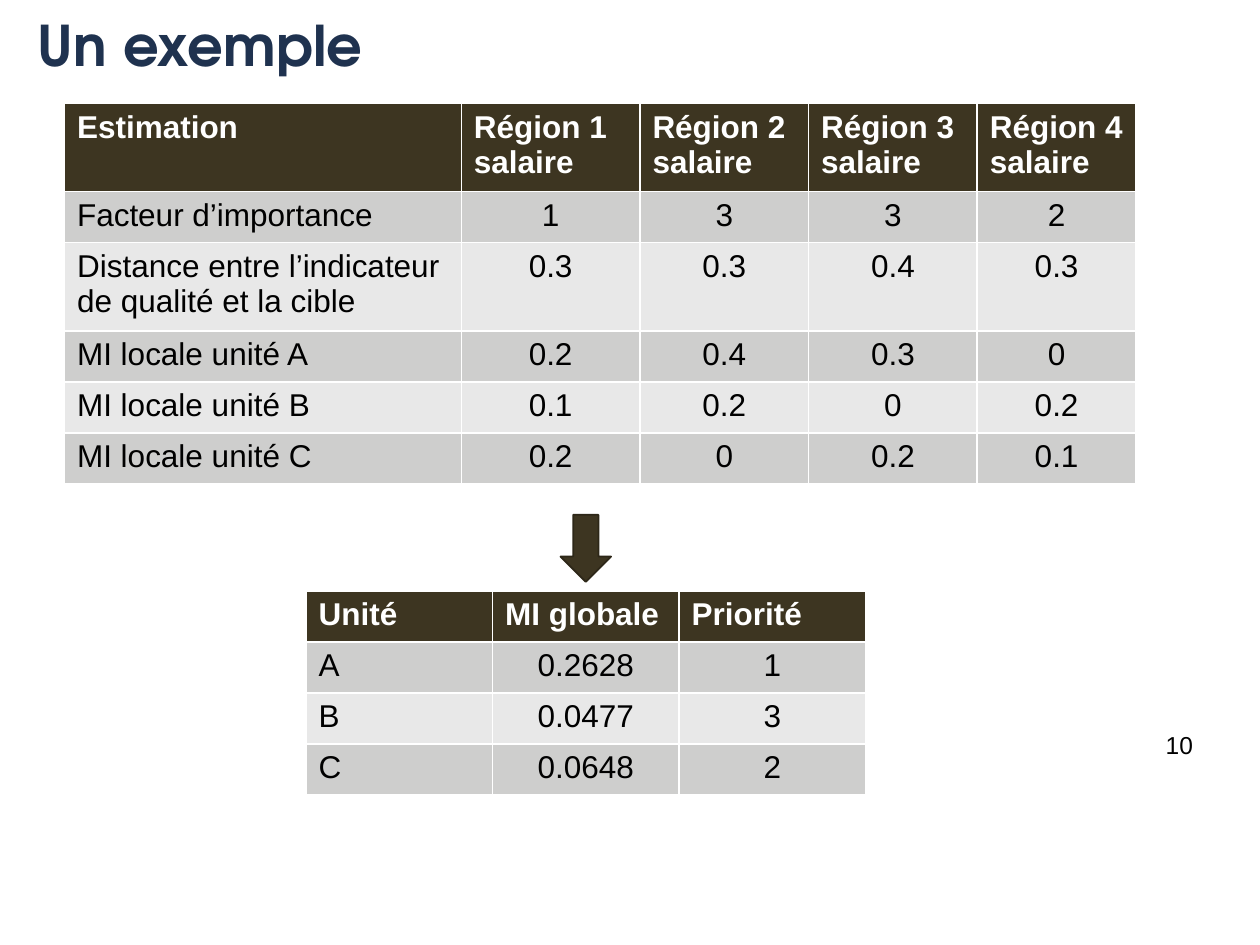
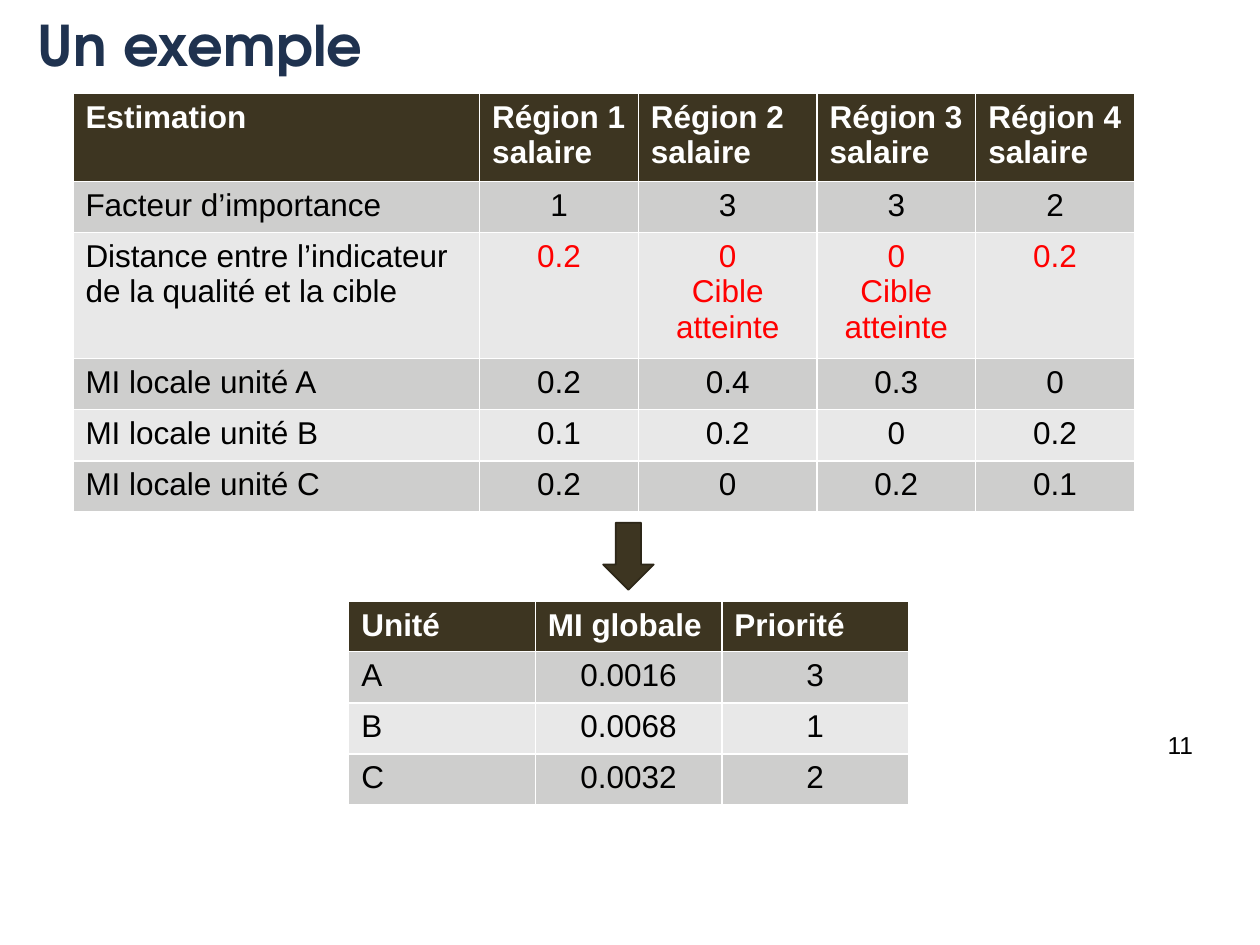
"""Build two slides that rank units by their local and global MI scores."""
from pptx import Presentation
from pptx.dml.color import RGBColor
from pptx.enum.shapes import MSO_SHAPE
from pptx.enum.text import MSO_ANCHOR, PP_ALIGN
from pptx.util import Cm, Pt

LEFT, CENTER, RIGHT = PP_ALIGN.LEFT, PP_ALIGN.CENTER, PP_ALIGN.RIGHT
TOP, MIDDLE = MSO_ANCHOR.TOP, MSO_ANCHOR.MIDDLE
ARROW = MSO_SHAPE.DOWN_ARROW

NAVY = RGBColor(0x1F, 0x32, 0x4F)
BROWN = RGBColor(0x3D, 0x35, 0x21)
EDGE = RGBColor(0x2D, 0x27, 0x18)
DARK = RGBColor(0xCE, 0xCE, 0xCD)
LIGHT = RGBColor(0xE8, 0xE8, 0xE8)
WHITE = RGBColor(0xFF, 0xFF, 0xFF)
BLACK = RGBColor(0x00, 0x00, 0x00)
RED = RGBColor(0xFF, 0x00, 0x00)

ROW = 1.03
HEADS = ["Estimation", "Région 1\nsalaire", "Région 2 salaire",
         "Région 3 salaire", "Région 4 salaire"]
WEIGHTS = ["Facteur d’importance", "1", "3", "3", "2"]
LOCALS = [["MI locale unité A", "0.2", "0.4", "0.3", "0"],
          ["MI locale unité B", "0.1", "0.2", "0", "0.2"],
          ["MI locale unité C", "0.2", "0", "0.2", "0.1"]]
RANKS = ["Unité", "MI globale", "Priorité"]

PAGES = [
    {"page": "10",
     "gaps": ["Distance entre l’indicateur de qualité et la cible",
              "0.3", "0.3", "0.4", "0.3"],
     "tint": BLACK,
     "spot": (1.3, 2.08),
     "cols": [8, 3.6, 3.4, 3.4, 3.2],
     "rows": [1.64, ROW, 1.7, ROW, ROW, ROW],
     "arrow": (11.3, 10.38),
     "base": (6.17, 11.91),
     "head": ROW,
     "ranks": [["A", "0.2628", "1"], ["B", "0.0477", "3"], ["C", "0.0648", "2"]]},
    {"page": "11",
     "gaps": ["Distance entre l’indicateur de la qualité et la cible",
              "0.2", "0\nCible atteinte", "0\nCible atteinte", "0.2"],
     "tint": RED,
     "spot": (1.47, 1.88),
     "cols": [8.2, 3.2, 3.6, 3.2, 3.2],
     "rows": [1.64, ROW, 2.4, ROW, ROW, ROW],
     "arrow": (12.16, 10.54),
     "base": (7.03, 12.12),
     "head": 0.9,
     "ranks": [["A", "0.0016", "3"], ["B", "0.0068", "1"], ["C", "0.0032", "2"]]},
]


def write(frame, text, size=18, font="Arial", color=BLACK, bold=False,
          align=LEFT, anchor=TOP):
    frame.text = text
    frame.word_wrap = True
    frame.vertical_anchor = anchor
    for para in frame.paragraphs:
        para.alignment = align
        para.font.size = Pt(size)
        para.font.name = font
        para.font.bold = bold
        para.font.color.rgb = color


def add_grid(slide, data, spot, cols, rows, tint=BLACK):
    table = slide.shapes.add_table(
        len(rows), len(cols), Cm(spot[0]), Cm(spot[1]),
        Cm(sum(cols)), Cm(sum(rows))).table
    for col, width in zip(table.columns, cols):
        col.width = Cm(width)
    for r, (line, height) in enumerate(zip(data, rows)):
        table.rows[r].height = Cm(height)
        for c, text in enumerate(line):
            cell = table.cell(r, c)
            cell.fill.solid()
            if r == 0:
                cell.fill.fore_color.rgb = BROWN
                write(cell.text_frame, text, color=WHITE, bold=True)
            else:
                cell.fill.fore_color.rgb = DARK if r % 2 else LIGHT
                write(cell.text_frame, text, align=CENTER if c else LEFT,
                      color=tint if r == 2 and c else BLACK)


deck = Presentation()
deck.slide_width, deck.slide_height = Cm(25.4), Cm(19.05)

for page in PAGES:
    slide = deck.slides.add_slide(deck.slide_layouts[5])

    title = slide.shapes.title
    title.left, title.top = Cm(0.5), Cm(0.08)
    title.width, title.height = Cm(18.67), Cm(1.6)
    write(title.text_frame, "Un exemple", size=32, font="TeX Gyre Adventor",
          color=NAVY, bold=True, anchor=MIDDLE)

    number = slide.shapes.add_textbox(Cm(22.7), Cm(14.6), Cm(1.6), Cm(1.32))
    write(number.text_frame, page["page"], size=14, align=RIGHT)

    add_grid(slide, [HEADS, WEIGHTS, page["gaps"], *LOCALS],
             page["spot"], page["cols"], page["rows"], page["tint"])

    left, top = page["arrow"]
    arrow = slide.shapes.add_shape(ARROW, Cm(left), Cm(top), Cm(1.02), Cm(1.35))
    arrow.shadow.inherit = False
    arrow.fill.solid()
    arrow.fill.fore_color.rgb = BROWN
    arrow.line.color.rgb = EDGE
    arrow.line.width = Pt(1)

    add_grid(slide, [RANKS, *page["ranks"]], page["base"],
             [3.76] * 3, [page["head"]] + [ROW] * 3)

deck.save("out.pptx")
